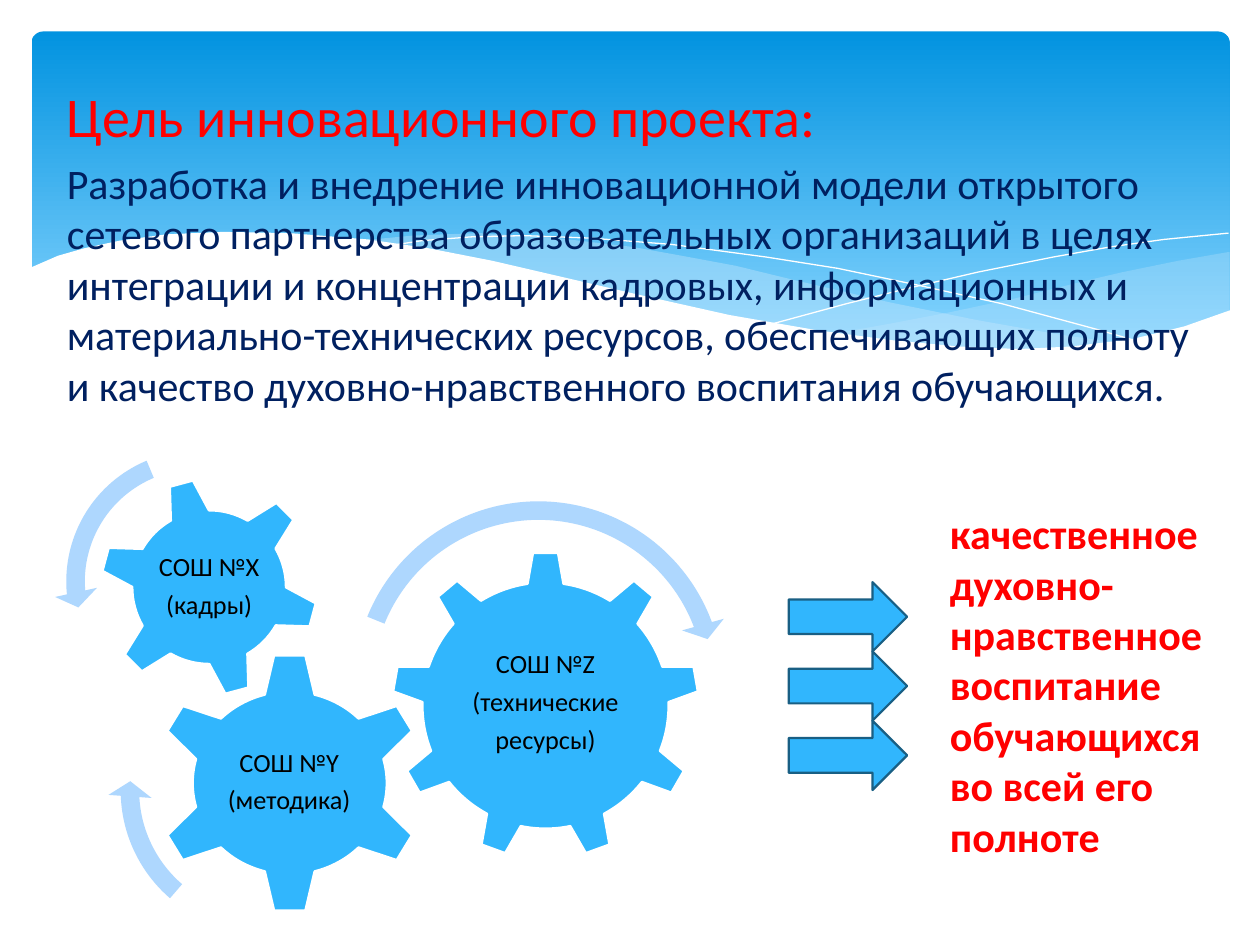
from dataclasses import dataclass

from lxml.etree import SubElement
from pptx import Presentation
from pptx.dml.color import RGBColor
from pptx.enum.shapes import MSO_SHAPE
from pptx.enum.text import MSO_ANCHOR, MSO_AUTO_SIZE, PP_ALIGN
from pptx.oxml.ns import qn
from pptx.util import Inches, Pt


@dataclass(frozen=True)
class Theme:
    """Colours, type sizes and line widths of the slide."""
    font: str = "Calibri"
    accent: str = "31B6FD"
    accent_edge: str = "195F84"
    turn: str = "AED7FE"
    sky_top: str = "0293E0"
    sky_bottom: str = "83D3FE"
    swell: str = "C6E7FC"
    paper: str = "FFFFFF"
    red: str = "FF0000"
    navy: str = "002060"
    ink: str = "000000"
    heading: int = 32
    body: int = 24
    label: int = 15
    edge: float = 1.25


@dataclass(frozen=True)
class Box:
    """A region measured in cells of a tenth of an inch."""
    left: float
    top: float
    width: float
    height: float

    def place(self, x=0, y=0, width=None, height=None):
        """Return the left, top, width and height of a part inside the region."""
        cells = (self.left + x, self.top + y, width or self.width, height or self.height)
        return [Inches(cell / 10) for cell in cells]

    def point(self, x, y):
        """Return the slide position of a point inside the region."""
        return Inches((self.left + x) / 10), Inches((self.top + y) / 10)


THEME = Theme()
BACKDROP = Box(2.5, 2.5, 95.1, 27)
GOAL = Box(4.3, 6, 91.3, 49.6)
GEARS = Box(4, 34, 55, 41)
ARROWS = Box(62.6, 46.2, 9.4, 16.5)
RESULT = Box(74.4, 39.8, 22.8, 29.3)

SWELL_RIGHT = [
    (95, 17.5), (91, 18.2), (86.6, 19.1), (83.6, 19.8), (78, 21.2), (72.8, 22.3),
    (68.1, 23.2), (63.6, 24), (68, 24.6), (72, 25), (77.8, 25.3), (82.9, 25.1),
    (87.2, 24.5), (91, 23.7), (95.1, 22.2), (95.1, 17.5)]
SWELL_WIDE = [
    (86.8, 24.8), (81.2, 24), (75, 22.9), (68.1, 21.5), (60.4, 19.7), (55.9, 18.6),
    (51.6, 17.8), (47.7, 17.1), (41.7, 16.4), (35.5, 16), (30.3, 16.2), (26.1, 16.6),
    (31.7, 17.4), (37.9, 18.6), (42.4, 19.7), (50.5, 21.5), (57.6, 23), (64, 24.1),
    (69.7, 24.9), (74.8, 25.2), (79.3, 25.3), (83.2, 25.2)]
CREST_FALLING = [
    (28.4, 17), (31, 16.6), (34.9, 16.3), (39.1, 16.2), (44.4, 16.4), (50.8, 16.9),
    (58.3, 17.9), (64, 18.8), (70.2, 20.1), (77, 21.6), (84.4, 23.6), (88.2, 24.7)]
CREST_RISING = [
    (58.8, 23.2), (64.7, 21.6), (69.5, 20.4), (75.1, 19.1), (81.1, 17.9),
    (85.6, 17.1), (89.9, 16.5), (95, 16)]
FOREGROUND = [
    (95.2, 22.1), (91.5, 23.4), (87.4, 24.4), (82.5, 25), (78.4, 25.2), (73.6, 25),
    (68.3, 24.5), (62.3, 23.7), (55.4, 22.5), (47.8, 20.8), (42.2, 19.5), (36.6, 18.2),
    (31.5, 17.2), (26.7, 16.5), (20.5, 16), (15.2, 15.9), (10.7, 16.1), (7, 16.6),
    (4.2, 17.2), (2.1, 17.8), (-0.2, 18.8), (-0.2, 30.4), (95.2, 30.4)]


def paint(shape, fill=None, edge=None, width=THEME.edge):
    """Set the fill and outline of a shape and drop its shadow."""
    shape.shadow.inherit = False
    if fill:
        shape.fill.solid()
        shape.fill.fore_color.rgb = RGBColor.from_string(fill)
    else:
        shape.fill.background()
    if edge:
        shape.line.color.rgb = RGBColor.from_string(edge)
        shape.line.width = Pt(width)
    else:
        shape.line.fill.background()


def style(paragraph, size, color, bold=False):
    """Set the font of a paragraph."""
    font = paragraph.font
    font.name, font.size, font.bold = THEME.font, Pt(size), bold
    font.color.rgb = RGBColor.from_string(color)


def add_wave(slide, box, points, fill=None, opacity=100, edge=None):
    """Draw one wave, closed when it is filled."""
    start, *rest = [box.point(*point) for point in points]
    builder = slide.shapes.build_freeform(*start)
    builder.add_line_segments(rest, close=fill is not None)
    wave = builder.convert_to_shape()
    paint(wave, fill, edge, 0)
    if opacity < 100:
        color = wave.fill._xPr.find(qn("a:solidFill"))[0]
        SubElement(color, qn("a:alpha"), val=str(opacity * 1000))


def add_backdrop(slide, box):
    """Draw the blue sky panel with its waves."""
    sky = slide.shapes.add_shape(MSO_SHAPE.ROUNDED_RECTANGLE, *box.place())
    sky.adjustments[0] = 0.034
    paint(sky)
    sky.fill.gradient()
    sky.fill.gradient_angle = 270
    stops = zip(sky.fill.gradient_stops, (0, 0.9), (THEME.sky_top, THEME.sky_bottom))
    for stop, position, color in stops:
        stop.position = position
        stop.color.rgb = RGBColor.from_string(color)
    add_wave(slide, box, SWELL_RIGHT, THEME.swell, 29)
    add_wave(slide, box, SWELL_WIDE, THEME.swell, 40)
    for crest in (CREST_FALLING, CREST_RISING):
        add_wave(slide, box, crest, edge=THEME.paper)
    add_wave(slide, box, FOREGROUND, THEME.paper)


def add_goal(slide, box):
    """Fill the body placeholder with the goal and bring it to the front."""
    goal = slide.placeholders[1]
    goal.left, goal.top, goal.width, goal.height = box.place()
    slide.shapes._spTree.append(goal._element)
    frame = goal.text_frame
    frame.auto_size = MSO_AUTO_SIZE.NONE
    frame.text = (
        "Цель инновационного проекта:\n"
        "Разработка и внедрение инновационной модели открытого сетевого партнерства "
        "образовательных организаций в целях интеграции и концентрации кадровых, "
        "информационных и материально-технических ресурсов, обеспечивающих полноту "
        "и качество духовно-нравственного воспитания обучающихся.")
    looks = ((THEME.heading, THEME.red, 0), (THEME.body, THEME.navy, 4.8))
    for paragraph, (size, color, gap) in zip(frame.paragraphs, looks):
        properties = paragraph._p.get_or_add_pPr()
        properties.set("marL", "0")
        properties.set("indent", "0")
        SubElement(properties, qn("a:buNone"))
        paragraph.space_before = Pt(gap)
        style(paragraph, size, color)


def add_gear(slide, box, kind, wheel, label, lines, rotation=0):
    """Draw a gear wheel with its upright label."""
    gear = slide.shapes.add_shape(kind, *box.place(*wheel))
    gear.rotation = rotation
    paint(gear, THEME.accent, THEME.paper)
    frame = slide.shapes.add_textbox(*box.place(*label)).text_frame
    frame.word_wrap = True
    frame.vertical_anchor = MSO_ANCHOR.MIDDLE
    frame.margin_left = frame.margin_right = Inches(0.02)
    frame.margin_top = frame.margin_bottom = Inches(0.02)
    frame.text = "\n".join(lines)
    for paragraph in frame.paragraphs:
        paragraph.alignment = PP_ALIGN.CENTER
        paragraph.line_spacing = 0.9
        paragraph.space_after = Pt(5.25)
        style(paragraph, THEME.label, THEME.ink)


def add_turn(slide, box, kind, x, y, size, rotation, adjustments):
    """Draw a curved arrow that shows which way a gear turns."""
    turn = slide.shapes.add_shape(kind, *box.place(x, y, size, size))
    turn.rotation = rotation
    for index, value in enumerate(adjustments):
        turn.adjustments[index] = value
    paint(turn, THEME.turn)


def add_gears(slide, box):
    """Draw the three linked schools and their turning arrows."""
    add_gear(slide, box, MSO_SHAPE.GEAR_9, (27.1, 9.8, 24.4, 24.4), (32, 15.5, 14.6, 12.6),
             ("СОШ №Z", "(технические", "ресурсы)"))
    add_gear(slide, box, MSO_SHAPE.GEAR_6, (8.2, 17.8, 21.6, 20.7), (13.5, 23, 10.9, 10.2),
             ("СОШ №Y", "(методика)"))
    add_gear(slide, box, MSO_SHAPE.GEAR_6, (3.9, 3.9, 17.4, 17.4), (7.7, 7.7, 9.8, 9.8),
             ("СОШ №Х", "(кадры)"), 345)
    add_turn(slide, box, MSO_SHAPE.CIRCULAR_ARROW, 23.1, 4.8, 31.3, 297.6,
             (0.047, 2.99, 25.131, 158.679, 0.055))
    add_turn(slide, box, MSO_SHAPE.LEFT_CIRCULAR_ARROW, 0.3, 0.8, 22.7, 0,
             (0.065, 4.3, 104.891, 148.378, 0.075))
    add_turn(slide, box, MSO_SHAPE.CIRCULAR_ARROW, 4.6, 16.5, 24.5, 315.6,
             (0.06, 3.941, 133.138, 105.082, 0.07))


def add_arrows(slide, box, count=3):
    """Stack equal arrows down the region."""
    height = box.height / count
    for row in range(count):
        arrow = slide.shapes.add_shape(
            MSO_SHAPE.RIGHT_ARROW, *box.place(0, row * height, box.width, height))
        paint(arrow, THEME.accent, THEME.accent_edge)


def add_result(slide, box):
    """Write the expected result beside the arrows."""
    frame = slide.shapes.add_textbox(*box.place()).text_frame
    frame.word_wrap = True
    frame.text = "качественное духовно-нравственное воспитание обучающихся во всей его полноте"
    style(frame.paragraphs[0], THEME.body, THEME.red, bold=True)


def main():
    """Build and save the slide."""
    deck = Presentation()
    deck.slide_width, deck.slide_height = Inches(10), Inches(7.5)
    slide = deck.slides.add_slide(deck.slide_layouts[1])
    heading = slide.shapes.title._element
    heading.getparent().remove(heading)
    add_backdrop(slide, BACKDROP)
    add_goal(slide, GOAL)
    add_gears(slide, GEARS)
    add_arrows(slide, ARROWS)
    add_result(slide, RESULT)
    deck.save("out.pptx")


if __name__ == "__main__":
    main()
